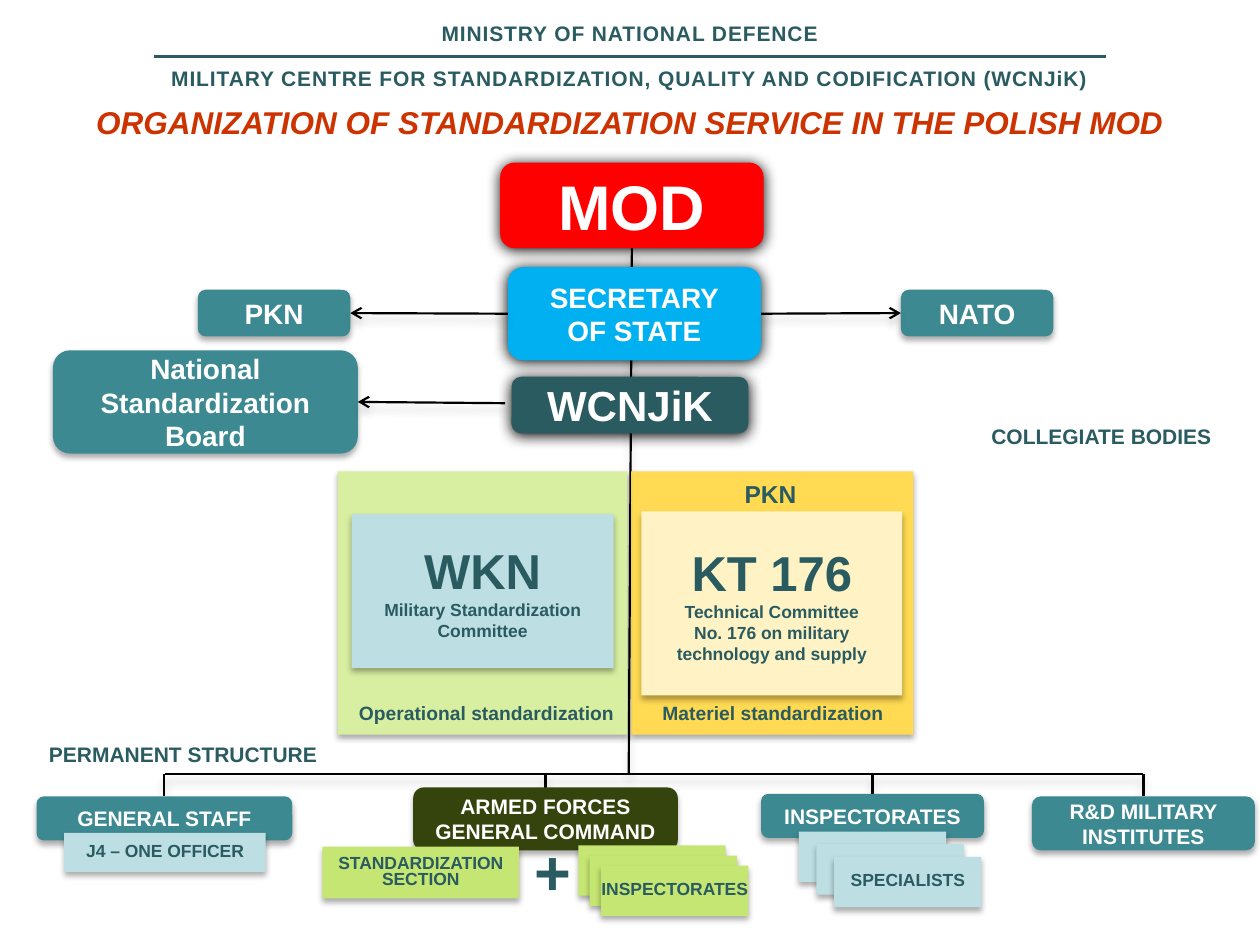
import copy
from dataclasses import dataclass

import pptx
import pptx.util
import pptx.dml.color
import pptx.enum.shapes
import pptx.enum.text
import pptx.oxml
import pptx.oxml.ns
from lxml import etree

Inches = pptx.util.Inches
Pt = pptx.util.Pt
qn = pptx.oxml.ns.qn
SHAPES = pptx.enum.shapes.MSO_SHAPE
ANCHOR = pptx.enum.text.MSO_ANCHOR
ALIGN = pptx.enum.text.PP_ALIGN

COLORS = {
    "petrol": "295B60", "teal": "3D8991", "ice": "BDDFE3", "red": "FF0000",
    "sky": "00B0F0", "olive": "34440C", "lime": "C5E672", "pale lime": "D8EEA1",
    "amber": "FFDA52", "cream": "FFF3C5", "rust": "CC3300",
    "white": "FFFFFF", "black": "000000",
}


@dataclass(frozen=True)
class Shadow:
    alpha: int
    blur: float
    distance: float


SOFT = Shadow(32, 3.5, 2.2)
GLOW = Shadow(100, 8.5, 1)
FAINT = Shadow(20, 5, 4)


@dataclass(frozen=True)
class Box:
    left: float
    top: float
    width: float
    height: float
    fill: str
    text: str = ""
    size: float = 12
    caption: str = ""
    shadow: Shadow = SOFT


@dataclass(frozen=True)
class Label:
    left: float
    top: float
    width: float
    height: float
    text: str
    size: float = 12
    align: ALIGN = ALIGN.CENTER
    wrap: bool = True


def rgb(name: str) -> pptx.dml.color.RGBColor:
    return pptx.dml.color.RGBColor.from_string(COLORS[name])


def write_text(shape, text: str, *, size: float, color: str = "petrol", italic: bool = False,
               align: ALIGN = ALIGN.CENTER, spacing: float = 0, line_spacing: float = 1) -> None:
    frame = shape.text_frame
    paragraph = frame.add_paragraph() if frame.text else frame.paragraphs[0]
    paragraph.text = text
    paragraph.alignment = align
    paragraph.line_spacing = line_spacing
    for run in paragraph.runs:
        run.font.name = "Arial"
        run.font.size = Pt(size)
        run.font.bold = True
        run.font.italic = italic
        run.font.color.rgb = rgb(color)
        if spacing:
            run.font._element.set("spc", str(int(spacing * 100)))
    for line_break in paragraph._p.findall(qn("a:br")):
        line_break.append(copy.deepcopy(paragraph.runs[0].font._element))


def cast_shadow(effects, shadow: Shadow) -> None:
    outer = etree.SubElement(effects, qn("a:outerShdw"), blurRad=str(Pt(shadow.blur)),
                             dist=str(Pt(shadow.distance)), dir="5400000",
                             algn="ctr", rotWithShape="0")
    color = etree.SubElement(outer, qn("a:srgbClr"), val=COLORS["black"])
    etree.SubElement(color, qn("a:alpha"), val=str(shadow.alpha * 1000))


def add_box(slide, box: Box, rounded: bool = False):
    shape = slide.shapes.add_shape(
        SHAPES.ROUNDED_RECTANGLE if rounded else SHAPES.RECTANGLE,
        Inches(box.left), Inches(box.top), Inches(box.width), Inches(box.height))
    shape.fill.solid()
    shape.fill.fore_color.rgb = rgb(box.fill)
    shape.line.fill.background()
    shape.shadow.inherit = False
    cast_shadow(shape._element.spPr.find(qn("a:effectLst")), box.shadow)
    shape.text_frame.vertical_anchor = ANCHOR.MIDDLE
    if box.text:
        tag = not rounded and not box.caption
        shape.text_frame.word_wrap = not tag
        write_text(shape, box.text, size=box.size, color="white" if rounded else "petrol",
                   line_spacing=0.75 if tag else 1)
    if box.caption:
        write_text(shape, box.caption, size=10)
    return shape


def add_stack(slide, left: float, top: float, step_x: float, step_y: float,
              fill: str, text: str) -> None:
    for index in range(3):
        add_box(slide, Box(left + index * step_x, top + index * step_y, 1.17, 0.4, fill,
                           text if index == 2 else "", 10))


def add_label(slide, label: Label, **text_format):
    shape = slide.shapes.add_textbox(Inches(label.left), Inches(label.top),
                                     Inches(label.width), Inches(label.height))
    shape.text_frame.word_wrap = label.wrap
    write_text(shape, label.text, size=label.size, align=label.align, **text_format)
    return shape


def add_line(slide, start: tuple[float, float], end: tuple[float, float], *, color: str = "black",
             width: float = 1.25, shadow: Shadow | None = FAINT, arrow: bool = False):
    connector = slide.shapes.add_connector(
        pptx.enum.shapes.MSO_CONNECTOR.STRAIGHT,
        Inches(start[0]), Inches(start[1]), Inches(end[0]), Inches(end[1]))
    connector.line.color.rgb = rgb(color)
    connector.line.width = Pt(width)
    properties = connector._element.spPr
    if arrow:
        etree.SubElement(properties.find(qn("a:ln")), qn("a:tailEnd"), type="arrow")
    effects = etree.SubElement(properties, qn("a:effectLst"))
    if shadow:
        cast_shadow(effects, shadow)
    return connector


def add_heading(slide) -> None:
    add_line(slide, (1.22, 0.45), (8.78, 0.45), color="petrol", width=1.5, shadow=None)
    for label in (
        Label(0, 0.15, 10, 0.22, "MINISTRY OF NATIONAL DEFENCE", wrap=False),
        Label(0, 0.45, 10, 0.34, "MILITARY CENTRE FOR STANDARDIZATION, QUALITY AND "
              "CODIFICATION (WCNJiK)", wrap=False),
    ):
        shape = add_label(slide, label, spacing=0.5)
        shape.text_frame.vertical_anchor = ANCHOR.MIDDLE
    title = add_label(slide, Label(0, 0.82, 10, 0.3, "ORGANIZATION OF STANDARDIZATION SERVICE "
                                   "IN THE POLISH MOD", 18), color="rust", italic=True)
    frame = title.text_frame
    frame.margin_left = frame.margin_right = frame.margin_top = frame.margin_bottom = 0


def add_leadership(slide) -> None:
    trunk = add_line(slide, (5, 1.97), (4.99, 6.14))
    mod, secretary, centre, board, nato, pkn = [add_box(slide, box, rounded=True) for box in (
        Box(3.97, 1.29, 2.09, 0.68, "red", "MOD", 36, shadow=GLOW),
        Box(4.03, 2.12, 2.01, 0.74, "sky", "SECRETARY\vOF STATE", 16, shadow=GLOW),
        Box(4.06, 2.99, 1.88, 0.45, "petrol", "WCNJiK", 24, shadow=GLOW),
        Box(0.42, 2.78, 2.42, 0.82, "teal", "National Standardization Board", 16),
        Box(7.15, 2.3, 1.21, 0.37, "teal", "NATO", 16),
        Box(1.57, 2.3, 1.21, 0.37, "teal", "PKN", 16),
    )]
    trunk.begin_connect(mod, 2)
    for partner, secretary_side, partner_side in ((pkn, 1, 3), (nato, 3, 1)):
        arrow = add_line(slide, (4.03, 2.49), (2.78, 2.49), arrow=True)
        arrow.begin_connect(secretary, secretary_side)
        arrow.end_connect(partner, partner_side)
    add_line(slide, (4.01, 3.2), (2.84, 3.2), arrow=True).end_connect(board, 3)


def add_committees(slide) -> None:
    for box in (
        Box(5.01, 3.74, 2.24, 2.09, "amber"),
        Box(2.68, 3.74, 2.3, 2.09, "pale lime"),
        Box(2.79, 4.08, 2.08, 1.22, "ice", "WKN", 28, "Military Standardization Committee"),
        Box(5.09, 4.06, 2.07, 1.46, "cream", "KT 176", 28,
            "Technical Committee\vNo. 176 on military technology and supply"),
    ):
        add_box(slide, box)
    for label in (
        Label(2.75, 5.52, 2.24, 0.29, "Operational standardization", 11, ALIGN.LEFT, False),
        Label(5.02, 5.52, 2.23, 0.29, "Materiel standardization", 11),
        Label(5.09, 3.75, 2.05, 0.34, "PKN", 14),
        Label(7.77, 3.31, 1.97, 0.3, "COLLEGIATE BODIES", 12, ALIGN.LEFT, False),
    ):
        add_label(slide, label)


def add_permanent_structure(slide) -> None:
    add_label(slide, Label(0.29, 5.84, 2.35, 0.3, "PERMANENT STRUCTURE", 12, ALIGN.LEFT, False))
    bar_top = 6.14
    add_line(slide, (1.31, bar_top), (9.07, bar_top))
    for unit in (
        Box(0.29, 6.32, 2.03, 0.35, "teal", "GENERAL STAFF"),
        Box(3.28, 6.25, 2.1, 0.5, "olive", "ARMED FORCES GENERAL COMMAND"),
        Box(6.04, 6.3, 1.77, 0.35, "teal", "INSPECTORATES"),
        Box(8.19, 6.32, 1.77, 0.43, "teal", "R&D MILITARY INSTITUTES"),
    ):
        center = unit.left + unit.width / 2
        drop = add_line(slide, (center, bar_top), (center, unit.top))
        drop.end_connect(add_box(slide, unit, rounded=True), 0)
    add_box(slide, Box(0.51, 6.61, 1.6, 0.31, "ice", "J4 – ONE OFFICER", 10))
    add_box(slide, Box(2.56, 6.72, 1.56, 0.41, "lime", "STANDARDIZATION\vSECTION", 10))
    add_stack(slide, 6.34, 6.6, 0.14, 0.1, "ice", "SPECIALISTS")
    add_stack(slide, 4.59, 6.71, 0.09, 0.08, "lime", "INSPECTORATES")
    add_label(slide, Label(4.14, 6.56, 0.46, 0.71, "+", 36))


def main() -> None:
    presentation = pptx.Presentation()
    presentation.slide_width = Inches(10)
    presentation.slide_height = Inches(7.5)
    slide = presentation.slides.add_slide(presentation.slide_layouts[6])
    add_heading(slide)
    add_leadership(slide)
    add_committees(slide)
    add_permanent_structure(slide)
    presentation.save("out.pptx")


if __name__ == "__main__":
    main()
